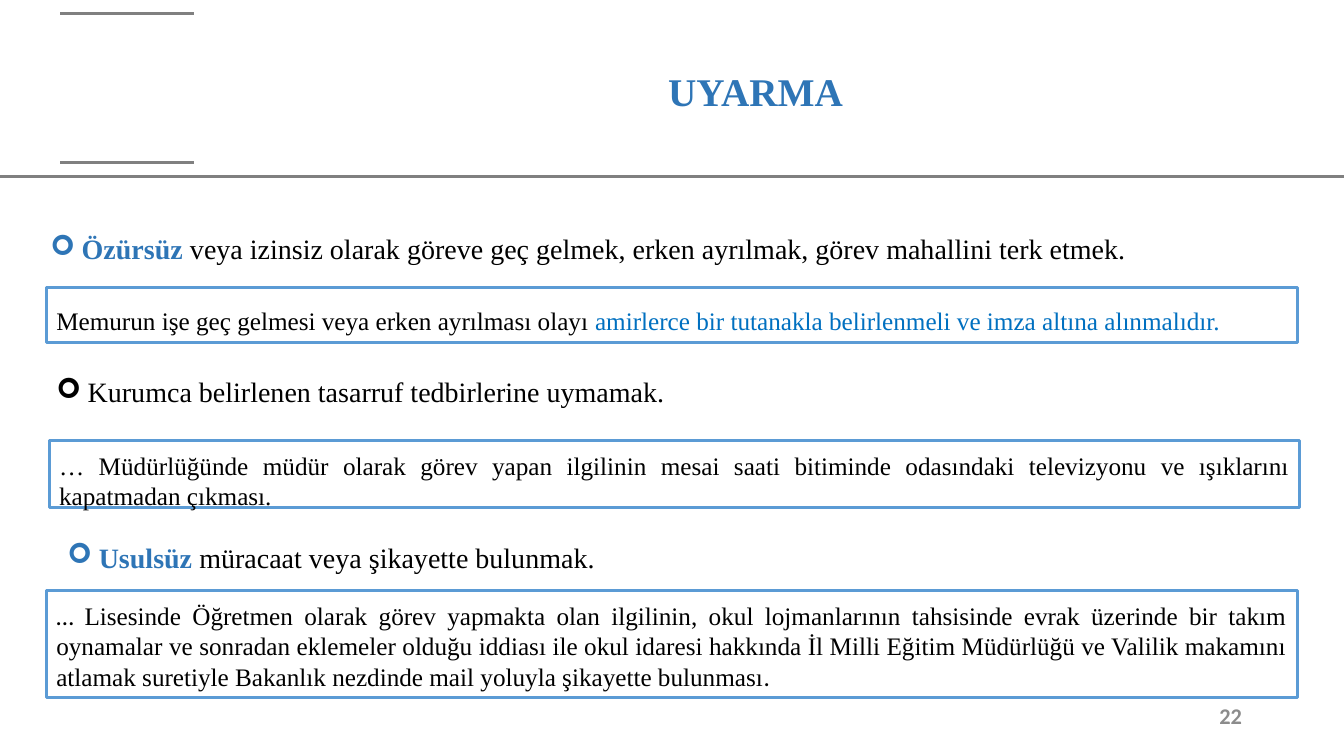
"""Builds the UYARMA slide: offences as bullets, each with a framed example."""
from lxml import etree
from pptx import Presentation
from pptx import util as u
from pptx.dml.color import RGBColor
from pptx.enum import shapes, text
from pptx.oxml import ns

SERIF, SANS = "Times New Roman", "Calibri"
HEADING, BLUE, FRAME = "2E75B6", "0070C0", "5B9BD5"
BLACK, WHITE, RULE, MUTED = "000000", "FFFFFF", "808080", "8C8C8C"


def color(value):
    return RGBColor.from_string(value)


def write(paragraph, words, size=18, font=SERIF, fill=BLACK, bold=False):
    run = paragraph.add_run()
    run.text = words
    run.font.size = u.Pt(size)
    run.font.name = font
    run.font.bold = bold
    run.font.color.rgb = color(fill)


class WarningSlide:
    def __init__(self, deck):
        self.slide = deck.slides.add_slide(deck.slide_layouts[6])

    def rule(self, left, right, y):
        line = self.slide.shapes.add_connector(
            shapes.MSO_CONNECTOR.STRAIGHT, u.Cm(left), u.Cm(y), u.Cm(right), u.Cm(y))
        line.line.color.rgb = color(RULE)
        line.line.width = u.Pt(2.25)
        etree.SubElement(line._element.spPr, ns.qn("a:effectLst"))

    def label(self, area, runs, align=text.PP_ALIGN.LEFT, anchor=text.MSO_ANCHOR.MIDDLE):
        frame = self.slide.shapes.add_textbox(*map(u.Cm, area)).text_frame
        frame.word_wrap = True
        frame.vertical_anchor = anchor
        paragraph = frame.paragraphs[0]
        paragraph.alignment = align
        for words, style in runs:
            write(paragraph, words, **style)
        return paragraph

    def bullet(self, left, top, width, runs):
        sized = [(words, {"size": 20, **style}) for words, style in runs]
        paragraph = self.label((left, top, width, 1.12), sized, anchor=text.MSO_ANCHOR.TOP)
        properties = paragraph._p.get_or_add_pPr()
        indent = u.Cm(0.79)
        properties.set("marL", str(indent))
        properties.set("indent", str(-indent))
        etree.SubElement(properties, ns.qn("a:buFont")).set("typeface", "Wingdings")
        etree.SubElement(properties, ns.qn("a:buChar")).set("char", "➢")

    def example(self, left, top, height, inset, runs, align=text.PP_ALIGN.JUSTIFY):
        box = self.slide.shapes.add_shape(
            shapes.MSO_SHAPE.RECTANGLE, *map(u.Cm, (left, top, 31.52, height)))
        box.shadow.inherit = False
        box.fill.solid()
        box.fill.fore_color.rgb = color(WHITE)
        box.line.color.rgb = color(FRAME)
        box.line.width = u.Pt(2.25)
        frame = box.text_frame
        frame.word_wrap = True
        frame.vertical_anchor = text.MSO_ANCHOR.TOP
        frame.margin_top, frame.margin_bottom = u.Cm(inset), 0
        paragraph = frame.paragraphs[0]
        paragraph.alignment = align
        for words, style in runs:
            write(paragraph, words, **style)


def main():
    deck = Presentation()
    deck.slide_width, deck.slide_height = u.Cm(33.87), u.Cm(19.05)
    page = WarningSlide(deck)
    key_term = {"fill": HEADING, "bold": True}

    page.rule(0, 33.87, 4.45)
    for y in (0.33, 4.09):
        page.rule(1.52, 4.9, y)
    title = page.label((6.53, 1.02, 25.02, 2.69), [("UYARMA", {"size": 28, **key_term})],
                       text.PP_ALIGN.CENTER)
    title.line_spacing = 0.9

    page.bullet(1.02, 5.72, 30.53, [
        ("Özürsüz ", key_term),
        ("veya izinsiz olarak göreve geç gelmek, erken ayrılmak, "
         "görev mahallini terk etmek.", {})])
    page.example(1.17, 7.24, 1.4, 0.45, [
        ("Memurun işe geç gelmesi veya erken ayrılması olayı ", {}),
        ("amirlerce bir tutanakla belirlenmeli ve imza altına alınmalıdır.", {"fill": BLUE})],
        text.PP_ALIGN.LEFT)

    page.bullet(1.17, 9.32, 30.2, [("Kurumca belirlenen tasarruf tedbirlerine uymamak.", {})])
    page.example(1.24, 11.1, 1.7, 0.25, [
        ("… Müdürlüğünde müdür olarak görev yapan ilgilinin mesai saati bitiminde "
         "odasındaki televizyonu ve ışıklarını kapatmadan çıkması.", {})])

    page.bullet(1.45, 13.49, 30.96, [
        ("Usulsüz", key_term), (" müracaat veya şikayette bulunmak.", {})])
    page.example(1.17, 14.88, 2.69, 0.25, [
        ("… ", {"font": SANS}),
        ("Lisesinde Öğretmen olarak görev yapmakta olan ilgilinin, okul lojmanlarının "
         "tahsisinde evrak üzerinde bir takım oynamalar ve sonradan eklemeler olduğu iddiası "
         "ile okul idaresi hakkında İl Milli Eğitim Müdürlüğü ve Valilik makamını atlamak "
         "suretiyle Bakanlık nezdinde mail yoluyla şikayette bulunması", {}),
        (".", {"font": SANS})])

    page.label((29.59, 17.53, 1.96, 1.02),
               [("22", {"size": 16, "font": SANS, "fill": MUTED, "bold": True})],
               text.PP_ALIGN.RIGHT)
    deck.save("out.pptx")


if __name__ == "__main__":
    main()
